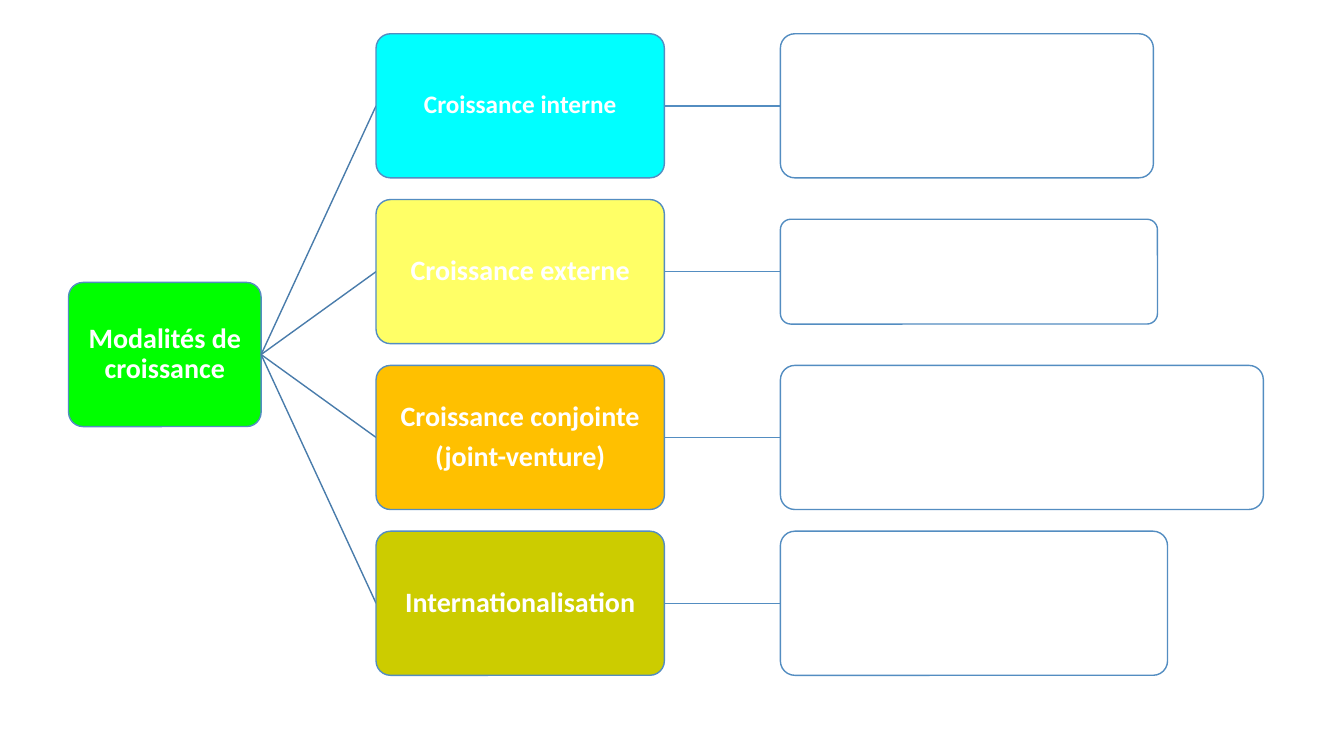
import pptx
import pptx.dml.color
import pptx.enum.shapes
import pptx.enum.text
import pptx.oxml.ns
import pptx.util
from lxml import etree

RGBColor = pptx.dml.color.RGBColor
Inches = pptx.util.Inches
Pt = pptx.util.Pt

WHITE = RGBColor(0xFF, 0xFF, 0xFF)
GREEN = RGBColor(0x00, 0xFF, 0x00)
CYAN = RGBColor(0x00, 0xFF, 0xFF)
YELLOW = RGBColor(0xFF, 0xFF, 0x66)
ORANGE = RGBColor(0xFF, 0xC0, 0x00)
OLIVE = RGBColor(0xCC, 0xCC, 0x00)
OUTLINE = RGBColor(0x53, 0x8D, 0xC1)
BRANCH_LINE = RGBColor(0x49, 0x7C, 0xAB)

# Tree grid, in inches: three columns, four rows
ROOT_LEFT, ROOT_WIDTH = 0.68, 1.91
BRANCH_LEFT, BRANCH_WIDTH = 3.73, 2.86
DETAIL_LEFT = 7.74
BOX_HEIGHT = 1.43
FIRST_ROW, ROW_PITCH = 1.05, 1.645

# Lines of text, font size, fill, detail box width and height
BRANCHES = [
    (["Croissance interne"], 18, CYAN, 3.7, BOX_HEIGHT),
    (["Croissance externe"], 20, YELLOW, 3.74, 1.04),
    (["Croissance conjointe", "(joint-venture)"], 20, ORANGE, 4.79, BOX_HEIGHT),
    (["Internationalisation"], 20, OLIVE, 3.84, BOX_HEIGHT),
]


def row_middle(row):
    return FIRST_ROW + row * ROW_PITCH


def add_box(slide, left, middle, width, height, fill):
    """Add a rounded box centred vertically on middle."""
    box = slide.shapes.add_shape(
        pptx.enum.shapes.MSO_SHAPE.ROUNDED_RECTANGLE,
        Inches(left), Inches(middle - height / 2), Inches(width), Inches(height))
    box.adjustments[0] = 0.1
    box.shadow.inherit = False
    box.fill.solid()
    box.fill.fore_color.rgb = fill
    box.line.color.rgb = OUTLINE
    box.line.width = Pt(1)
    return box


def add_label(box, lines, size):
    frame = box.text_frame
    frame.word_wrap = True
    frame.vertical_anchor = pptx.enum.text.MSO_ANCHOR.MIDDLE
    frame.margin_left = frame.margin_right = Inches(0.01)
    frame.margin_top = frame.margin_bottom = Inches(0.01)
    for index, line in enumerate(lines):
        paragraph = frame.add_paragraph() if index else frame.paragraphs[0]
        paragraph.alignment = pptx.enum.text.PP_ALIGN.CENTER
        paragraph.line_spacing = 0.9
        paragraph.space_after = Pt(0.35 * size)
        run = paragraph.add_run()
        run.text = line
        run.font.name = "Calibri"
        run.font.size = Pt(size)
        run.font.bold = True
        run.font.color.rgb = WHITE


def add_link(slide, start, end, color):
    link = slide.shapes.add_connector(
        pptx.enum.shapes.MSO_CONNECTOR.STRAIGHT,
        *(Inches(value) for value in start + end))
    link.line.color.rgb = color
    link.line.width = Pt(1)
    etree.SubElement(link._element.spPr, pptx.oxml.ns.qn("a:effectLst"))


def add_branch(slide, root_exit, middle, branch):
    """Add one row: link from the root, named box, link and empty detail box."""
    lines, size, fill, detail_width, detail_height = branch
    add_link(slide, root_exit, (BRANCH_LEFT, middle), BRANCH_LINE)
    name_box = add_box(slide, BRANCH_LEFT, middle, BRANCH_WIDTH, BOX_HEIGHT, fill)
    add_label(name_box, lines, size)
    add_link(slide, (BRANCH_LEFT + BRANCH_WIDTH, middle),
             (DETAIL_LEFT, middle), OUTLINE)
    add_box(slide, DETAIL_LEFT, middle, detail_width, detail_height, WHITE)


def main():
    presentation = pptx.Presentation()
    presentation.slide_width = Inches(13.33)
    presentation.slide_height = Inches(7.5)
    slide = presentation.slides.add_slide(presentation.slide_layouts[6])

    root_middle = row_middle((len(BRANCHES) - 1) / 2)
    root = add_box(slide, ROOT_LEFT, root_middle, ROOT_WIDTH, BOX_HEIGHT, GREEN)
    add_label(root, ["Modalités de croissance"], 20)

    root_exit = (ROOT_LEFT + ROOT_WIDTH, root_middle)
    for row, branch in enumerate(BRANCHES):
        add_branch(slide, root_exit, row_middle(row), branch)

    presentation.save("out.pptx")


if __name__ == "__main__":
    main()
